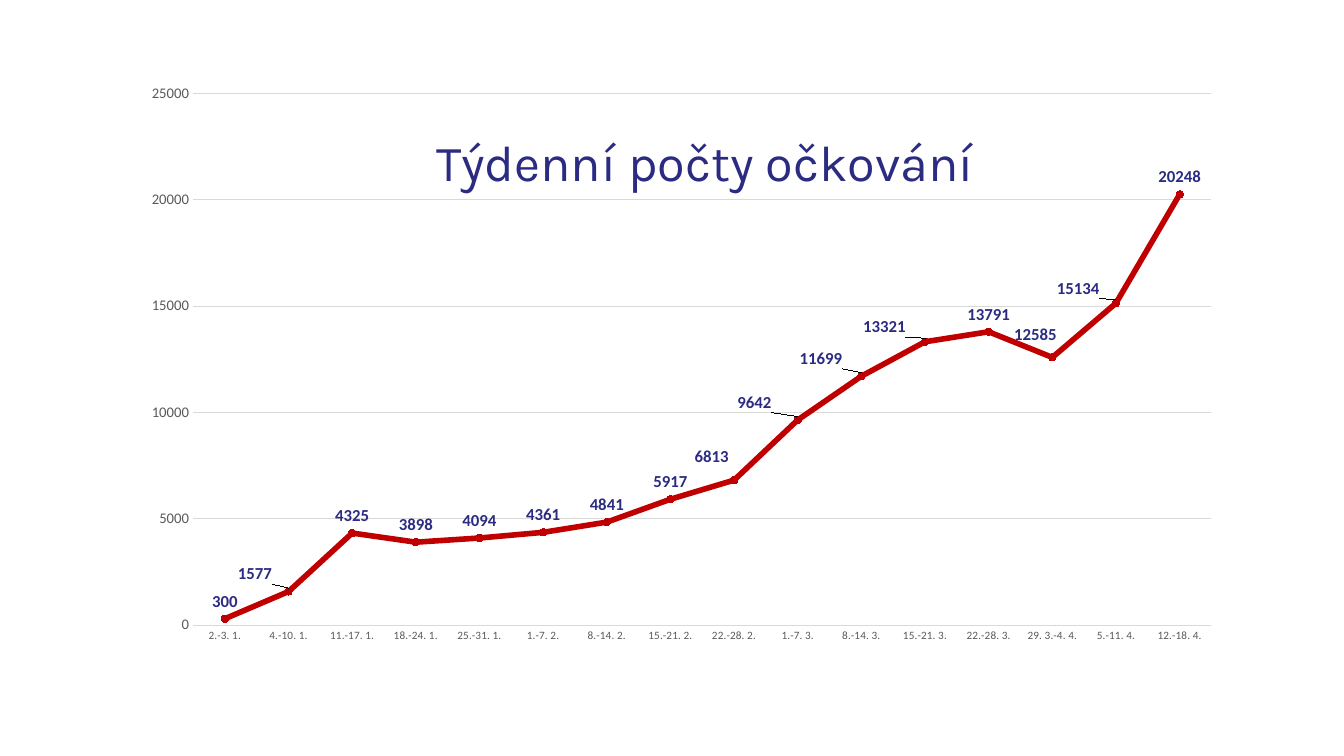
from lxml import etree
from pptx import Presentation
from pptx.chart.data import CategoryChartData
from pptx.dml.color import RGBColor
from pptx.enum.chart import XL_CHART_TYPE, XL_LABEL_POSITION, XL_MARKER_STYLE, XL_TICK_MARK
from pptx.oxml.ns import qn
from pptx.util import Pt

LINE_MARKERS = XL_CHART_TYPE.LINE_MARKERS
ABOVE = XL_LABEL_POSITION.ABOVE
CIRCLE = XL_MARKER_STYLE.CIRCLE
NO_TICK = XL_TICK_MARK.NONE

TITLE = "Týdenní počty očkování"
WEEKLY_COUNTS = [
    ("2.-3. 1.", 300), ("4.-10. 1.", 1577), ("11.-17. 1.", 4325), ("18.-24. 1.", 3898),
    ("25.-31. 1.", 4094), ("1.-7. 2.", 4361), ("8.-14. 2.", 4841), ("15.-21. 2.", 5917),
    ("22.-28. 2.", 6813), ("1.-7. 3.", 9642), ("8.-14. 3.", 11699), ("15.-21. 3.", 13321),
    ("22.-28. 3.", 13791), ("29. 3.-4. 4.", 12585), ("5.-11. 4.", 15134), ("12.-18. 4.", 20248),
]
LABEL_SHIFTS = {
    1: (-24, 0), 8: (-16, -4), 9: (-31, 0), 10: (-29, 0),
    11: (-29, 2), 13: (-12, -4), 14: (-27, 2),
}
NAVY, RED, GRAY, GRID = "2B2B82", "C00000", "595959", "D9D9D9"
SLIDE_WIDTH, SLIDE_HEIGHT = 960, 540
LEFT, TOP, WIDTH, HEIGHT = 87.1, 52.6, 791.3, 418.3
TITLE_PLACE = (218, 33)
PLOT_PLACE = (50.8, 14.1, 727.5, 379.9)


def color(value):
    return RGBColor.from_string(value)


def format_font(font, size, value, name="Calibri", bold=False):
    font.size = Pt(size)
    font.color.rgb = color(value)
    font.name = name
    font.bold = bold


def format_line(line, value, width):
    line.color.rgb = color(value)
    line.width = Pt(width)


def set_layout(parent, place, mode=None, inner=False):
    for old in parent.findall(qn("c:layout")):
        parent.remove(old)
    layout = etree.Element(qn("c:layout"))
    manual = etree.SubElement(layout, qn("c:manualLayout"))
    entries = [("layoutTarget", "inner")] if inner else []
    if mode:
        entries += [("xMode", mode), ("yMode", mode)]
    lengths = (WIDTH, HEIGHT, WIDTH, HEIGHT)
    entries += [(tag, f"{value / length:.4f}") for tag, value, length in zip("xywh", place, lengths)]
    for tag, value in entries:
        etree.SubElement(manual, qn(f"c:{tag}")).set("val", value)
    has_lead = len(parent) and parent[0].tag in (qn("c:tx"), qn("c:idx"))
    parent.insert(1 if has_lead else 0, layout)


def add_weekly_chart(slide):
    data = CategoryChartData()
    data.categories = [week for week, count in WEEKLY_COUNTS]
    data.add_series("Series 1", [count for week, count in WEEKLY_COUNTS])
    frame = slide.shapes.add_chart(LINE_MARKERS, Pt(LEFT), Pt(TOP), Pt(WIDTH), Pt(HEIGHT), data)
    chart = frame.chart
    format_font(chart.font, 10, "000000")
    chart.has_legend = False
    return chart


def format_title(chart):
    chart.has_title = True
    title = chart.chart_title
    title.text_frame.text = TITLE
    format_font(title.text_frame.paragraphs[0].runs[0].font, 36, NAVY, "Karla")
    element = chart._chartSpace.chart.find(qn("c:title"))
    set_layout(element, TITLE_PLACE, "edge")
    element.find(qn("c:overlay")).set("val", "1")


def format_axes(chart):
    for axis, size in ((chart.category_axis, 8), (chart.value_axis, 10.5)):
        axis.major_tick_mark = NO_TICK
        axis.minor_tick_mark = NO_TICK
        format_font(axis.tick_labels.font, size, GRAY)
    format_line(chart.category_axis.format.line, GRID, 0.75)
    values = chart.value_axis
    values.minimum_scale, values.maximum_scale, values.major_unit = 0, 25000, 5000
    values.format.line.fill.background()
    format_line(values.major_gridlines.format.line, GRID, 0.75)


def format_series(chart):
    plot = chart.plots[0]
    plot.vary_by_categories = False
    series = plot.series[0]
    series.smooth = False
    format_line(series.format.line, RED, 4)
    series.marker.style = CIRCLE
    series.marker.size = 5
    series.marker.format.fill.solid()
    series.marker.format.fill.fore_color.rgb = color(RED)
    format_line(series.marker.format.line, RED, 0.75)
    labels = series.data_labels
    labels.show_value = True
    labels.position = ABOVE
    format_font(labels.font, 12, NAVY, bold=True)
    for index, shift in LABEL_SHIFTS.items():
        label = series.points[index].data_label
        label.position = ABOVE
        format_font(label.font, 12, NAVY, bold=True)
    for element in series._element.iter(qn("c:dLbl")):
        index = int(element.find(qn("c:idx")).get("val"))
        set_layout(element, LABEL_SHIFTS[index])


def main():
    presentation = Presentation()
    presentation.slide_width = Pt(SLIDE_WIDTH)
    presentation.slide_height = Pt(SLIDE_HEIGHT)
    slide = presentation.slides.add_slide(presentation.slide_layouts[6])
    chart = add_weekly_chart(slide)
    format_title(chart)
    format_axes(chart)
    format_series(chart)
    set_layout(chart._chartSpace.chart.plotArea, PLOT_PLACE, "edge", inner=True)
    presentation.save("out.pptx")


if __name__ == "__main__":
    main()
